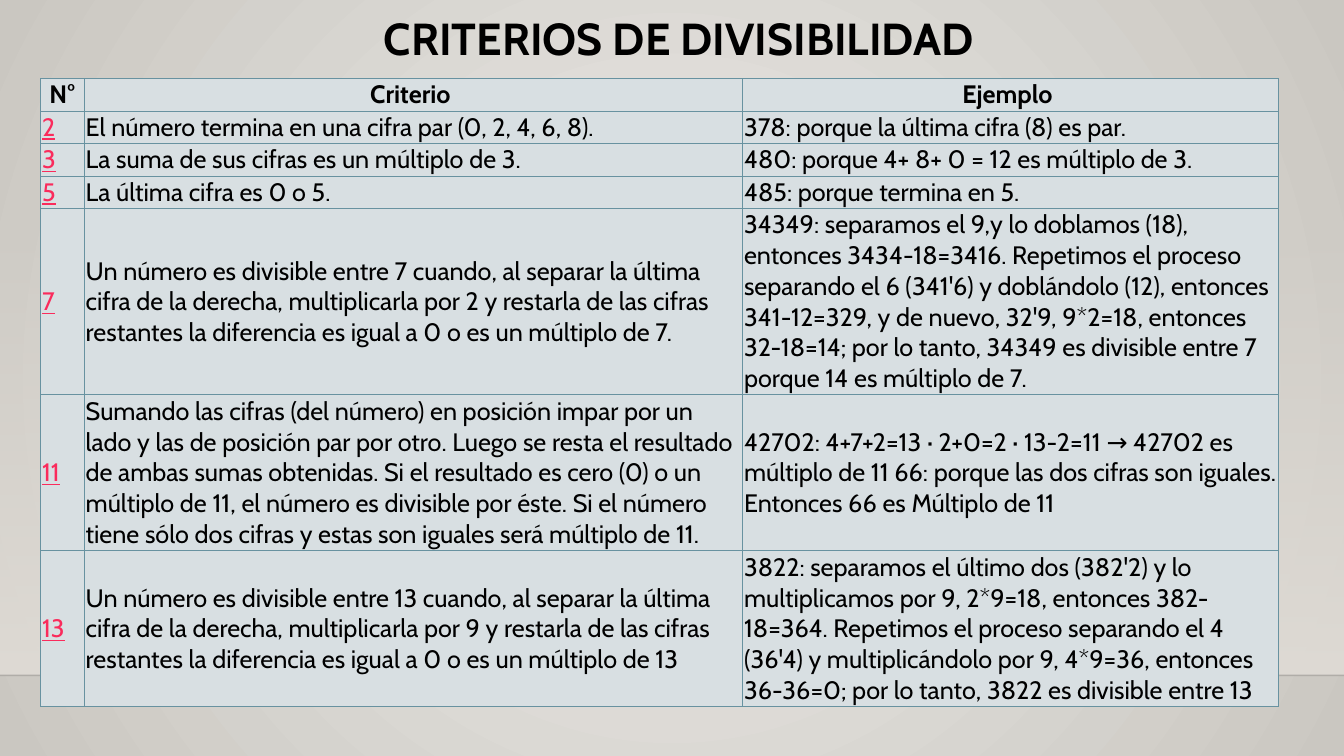
from lxml import etree
from pptx import Presentation
from pptx.dml.color import RGBColor
from pptx.enum.shapes import MSO_CONNECTOR as Connector, MSO_SHAPE as Shape
from pptx.enum.text import MSO_ANCHOR as Anchor, PP_ALIGN as Align
from pptx.oxml import parse_xml
from pptx.oxml.ns import nsdecls, qn
from pptx.util import Cm, Pt

FONT = "Cabin"
BLACK = RGBColor(0x00, 0x00, 0x00)
PINK = RGBColor(0xFA, 0x2B, 0x5C)
CELL_FILL = RGBColor(0xD8, 0xDF, 0xE2)
BORDER = RGBColor(0x68, 0x92, 0xA0)
CENTER = RGBColor(0xEC, 0xEA, 0xE7)
EDGE = RGBColor(0xCA, 0xC7, 0xC1)
FLOOR = RGBColor(0xDF, 0xDB, 0xD5)
RADIAL = ('<a:path path="circle"><a:fillToRect l="50000" t="50000" '
          'r="50000" b="50000"/></a:path>')
DOWNWARD = '<a:lin ang="5400000" scaled="0"/>'

WIDTH, HEIGHT = Cm(33.87), Cm(19.05)
FLOOR_TOP, FLOOR_BOTTOM = Cm(5.61), Cm(17.02)
COLUMN_WIDTHS = [1.1, 16.59, 13.5]
ROW_HEIGHTS = [0.82, 0.82, 0.82, 0.82, 4.69, 3.93, 3.93]

HEADINGS = ["N°", "Criterio ", "Ejemplo "]
CRITERIA = [
    ("2", "El número termina en una cifra par (0, 2, 4, 6, 8).",
     "378: porque la última cifra (8) es par."),
    ("3", "La suma de sus cifras es un múltiplo de 3.",
     "480: porque 4+ 8+ 0 = 12 es múltiplo de 3."),
    ("5", "La última cifra es 0 o 5.", "485: porque termina en 5."),
    ("7", "Un número es divisible entre 7 cuando, al separar la última cifra "
     "de la derecha, multiplicarla por 2 y restarla de las cifras restantes "
     "la diferencia es igual a 0 o es un múltiplo de 7.",
     "34349: separamos el 9,y lo doblamos (18), entonces 3434-18=3416. "
     "Repetimos el proceso separando el 6 (341'6) y doblándolo (12), entonces "
     "341-12=329, y de nuevo, 32'9, 9*2=18, entonces 32-18=14; por lo tanto, "
     "34349 es divisible entre 7 porque 14 es múltiplo de 7."),
    ("11", "Sumando las cifras (del número) en posición impar por un lado y "
     "las de posición par por otro. Luego se resta el resultado de ambas "
     "sumas obtenidas. Si el resultado es cero (0) o un múltiplo de 11, el "
     "número es divisible por éste. Si el número tiene sólo dos cifras y "
     "estas son iguales será múltiplo de 11.",
     "42702: 4+7+2=13 · 2+0=2 · 13-2=11 → 42702 es múltiplo de 11 66: porque "
     "las dos cifras son iguales. Entonces 66 es Múltiplo de 11"),
    ("13", "Un número es divisible entre 13 cuando, al separar la última cifra "
     "de la derecha, multiplicarla por 9 y restarla de las cifras restantes "
     "la diferencia es igual a 0 o es un múltiplo de 13",
     "3822: separamos el último dos (382'2) y lo multiplicamos por 9, 2*9=18, "
     "entonces 382-18=364. Repetimos el proceso separando el 4 (36'4) y "
     "multiplicándolo por 9, 4*9=36, entonces 36-36=0; por lo tanto, 3822 es "
     "divisible entre 13"),
]


class SlideBuilder:
    def __init__(self, presentation):
        self.slide = presentation.slides.add_slide(presentation.slide_layouts[5])

    def add_run(self, paragraph, text, size=18, color=BLACK, bold=False,
                underline=False):
        run = paragraph.add_run()
        run.text = text
        font = run.font
        font.name, font.size, font.bold = FONT, Pt(size), bold
        font.underline = underline
        font.color.rgb = color

    def set_gradient(self, element, stops, direction):
        """Swap the solid fill inside element for a gradient."""
        stops_xml = "".join(
            f'<a:gs pos="{position * 1000}"><a:srgbClr val="{color}">'
            f'<a:alpha val="{opacity * 1000}"/></a:srgbClr></a:gs>'
            for position, color, opacity in stops)
        solid = next(element.iter(qn("a:solidFill")))
        solid.getparent().replace(solid, parse_xml(
            f'<a:gradFill {nsdecls("a")} rotWithShape="1"><a:gsLst>{stops_xml}'
            f'</a:gsLst>{direction}</a:gradFill>'))

    def set_background(self):
        self.slide.background.fill.solid()
        self.set_gradient(self.slide.element,
                          [(0, CENTER, 100), (100, EDGE, 100)], RADIAL)

    def add_floor(self):
        shapes = self.slide.shapes
        floor = shapes.add_shape(Shape.RECTANGLE, 0, FLOOR_TOP, WIDTH,
                                 FLOOR_BOTTOM - FLOOR_TOP)
        floor.shadow.inherit = False
        floor.line.fill.background()
        floor.fill.solid()
        self.set_gradient(floor.element.spPr,
                          [(0, FLOOR, 0), (100, FLOOR, 100)], DOWNWARD)
        edge = shapes.add_connector(Connector.STRAIGHT, 0, FLOOR_BOTTOM,
                                    WIDTH, FLOOR_BOTTOM)
        edge.line.width = Pt(1)
        edge.line.color.rgb = BLACK
        properties = edge.element.spPr
        color = next(properties.iter(qn("a:srgbClr")))
        etree.SubElement(color, qn("a:alpha"), val="20000")
        etree.SubElement(properties, qn("a:effectLst"))
        # Keep the backdrop behind the title
        title = shapes.title.element
        title.addprevious(floor.element)
        title.addprevious(edge.element)

    def add_title(self, text):
        title = self.slide.shapes.title
        title.left, title.top = Cm(3.91), Cm(0.3)
        title.width, title.height = Cm(26.67), Cm(2.92)
        frame = title.text_frame
        frame.word_wrap = True
        frame.vertical_anchor = Anchor.TOP
        paragraph = frame.paragraphs[0]
        paragraph.alignment = Align.CENTER
        paragraph.line_spacing = 0.9
        self.add_run(paragraph, text, size=32, bold=True)

    def format_cell(self, cell):
        cell.margin_left = cell.margin_right = Cm(0.04)
        cell.margin_top = cell.margin_bottom = Cm(0.02)
        cell.vertical_anchor = Anchor.MIDDLE
        properties = cell._tc.get_or_add_tcPr()
        for side in "LRTB":
            properties.append(parse_xml(
                f'<a:ln{side} {nsdecls("a")} w="{Pt(0.75)}"><a:solidFill>'
                f'<a:srgbClr val="{BORDER}"/></a:solidFill></a:ln{side}>'))
        cell.fill.solid()
        cell.fill.fore_color.rgb = CELL_FILL

    def add_table(self, headings, rows):
        table = self.slide.shapes.add_table(
            len(rows) + 1, len(headings), Cm(1.02), Cm(1.98),
            Cm(sum(COLUMN_WIDTHS)), Cm(sum(ROW_HEIGHTS))).table
        table.first_row = table.horz_banding = False
        for column, width in zip(table.columns, COLUMN_WIDTHS):
            column.width = Cm(width)
        for row, height in zip(table.rows, ROW_HEIGHTS):
            row.height = Cm(height)
        for row_index, texts in enumerate([headings, *rows]):
            for column_index, text in enumerate(texts):
                cell = table.cell(row_index, column_index)
                self.format_cell(cell)
                paragraph = cell.text_frame.paragraphs[0]
                if row_index == 0:
                    paragraph.alignment = Align.CENTER
                    self.add_run(paragraph, text, bold=True)
                elif column_index == 0:
                    self.add_run(paragraph, text, color=PINK, underline=True)
                    self.add_run(paragraph, " ")
                else:
                    self.add_run(paragraph, text)


def main():
    presentation = Presentation()
    presentation.slide_width, presentation.slide_height = WIDTH, HEIGHT
    builder = SlideBuilder(presentation)

    # Backdrop
    builder.set_background()
    builder.add_floor()

    # Title and table of criteria
    builder.add_title("CRITERIOS DE DIVISIBILIDAD ")
    builder.add_table(HEADINGS, CRITERIA)
    presentation.save("out.pptx")


if __name__ == "__main__":
    main()
